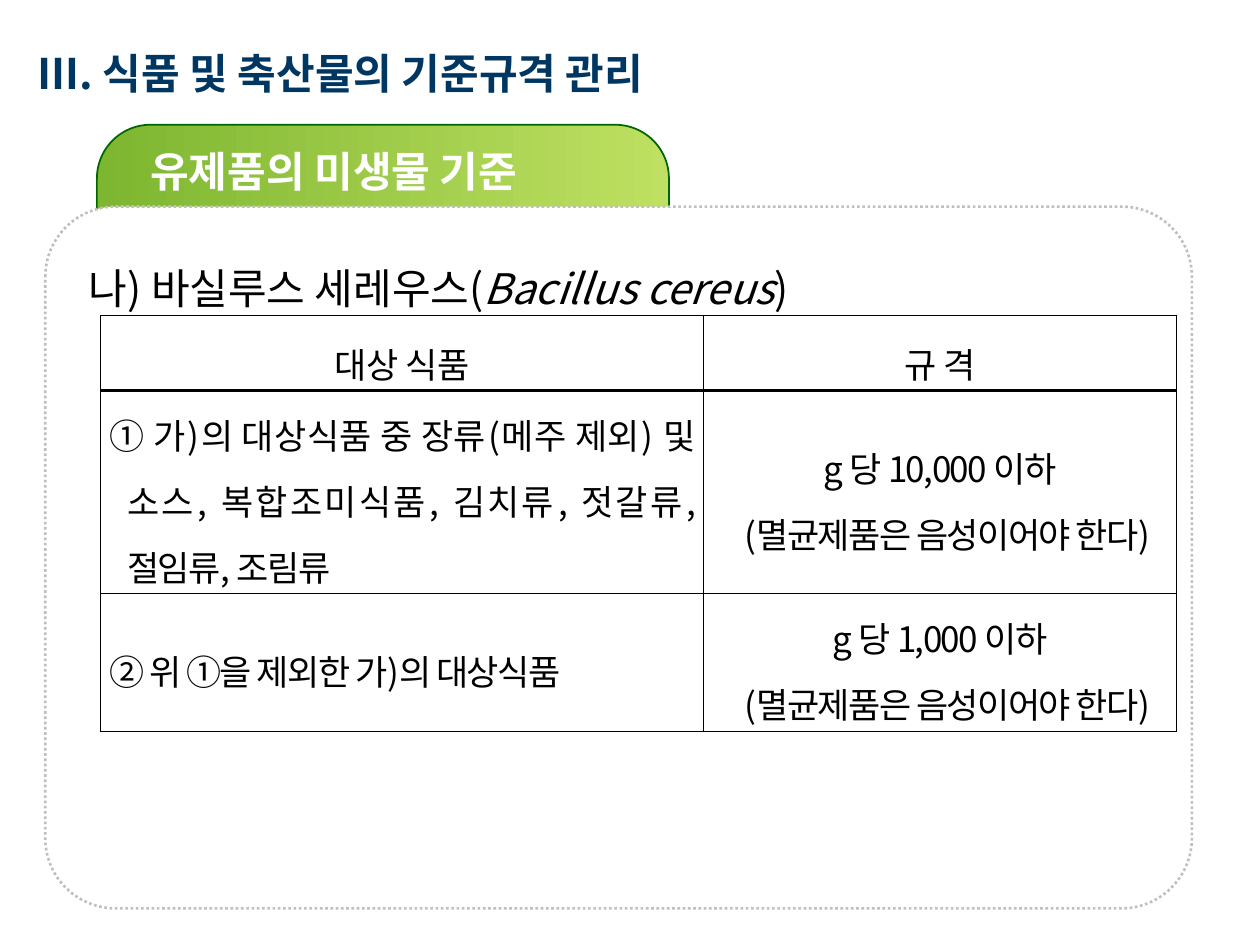
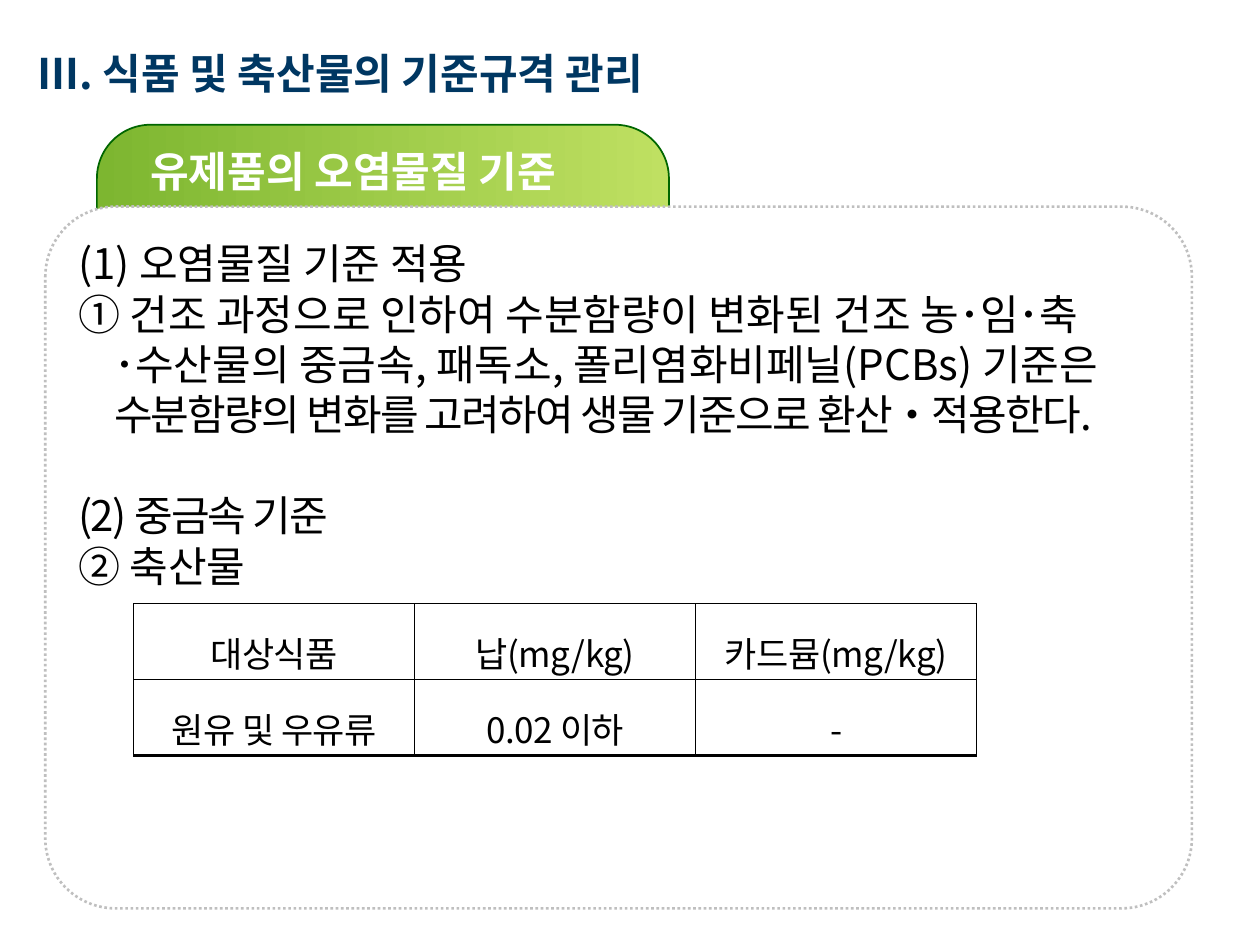
from dataclasses import dataclass

from lxml import etree
from pptx import Presentation
from pptx.dml.color import RGBColor
from pptx.enum import dml, shapes, text
from pptx.oxml import ns
from pptx.util import Pt


@dataclass(frozen=True)
class Theme:
    font: str = "Noto Sans CJK KR"
    navy: str = "003762"
    black: str = "000000"
    white: str = "FFFFFF"
    grey: str = "BFBFBF"
    green_line: str = "006600"
    green_from: str = "7DB630"
    green_to: str = "BFE062"
    head_size: float = 24
    table_size: float = 20
    line_pitch: float = 28.8
    thin: float = 0.56
    thick: float = 1.98


T = Theme()
LEFT, CENTER, JUSTIFY = (text.PP_ALIGN.LEFT, text.PP_ALIGN.CENTER,
                         text.PP_ALIGN.JUSTIFY)
SECTION = "Ⅲ. 식품 및 축산물의 기준규격 관리"
TITLE_BOX = (14.4, 20.9, 420, 39.6)
BAND_BOX = (55.4, 71.3, 326.9, 183.6)
PANEL_BOX = (25.9, 118.1, 655.2, 401)


def rgb(value):
    return RGBColor.from_string(value)


def write(p, content, size=T.head_size, color=T.black, bold=False, italic=False,
          spc=0, align=LEFT, spacing=Pt(T.line_pitch), before=0, margin=0, indent=0):
    """Add content to paragraph p; a newline becomes a line break."""
    p.alignment, p.line_spacing, p.space_before = align, spacing, Pt(before)
    pPr = p._p.get_or_add_pPr()
    pPr.set("marL", str(Pt(margin)))
    pPr.set("indent", str(Pt(indent)))
    for i, line in enumerate(content.split("\n")):
        if i:
            p.add_line_break()
        r = p.add_run()
        r.text = line
        f = r.font
        f.name, f.size, f.bold, f.italic = T.font, Pt(size), bold, italic
        f.color.rgb = rgb(color)
        rPr = r._r.get_or_add_rPr()
        rPr.set("spc", str(round(spc * 100)))
        etree.SubElement(rPr, ns.qn("a:ea"), typeface=T.font)


def frame(sp, left=7.2, right=0):
    tf = sp.text_frame
    tf.word_wrap = True
    tf.vertical_anchor = text.MSO_ANCHOR.TOP
    tf.margin_left, tf.margin_right = Pt(left), Pt(right)
    tf.margin_top, tf.margin_bottom = Pt(6), Pt(3.6)
    return tf


def round_rect(s, box, radius, line, width):
    sp = s.shapes.add_shape(shapes.MSO_SHAPE.ROUNDED_RECTANGLE, *map(Pt, box))
    sp.adjustments[0] = radius
    sp.shadow.inherit = False
    sp.line.color.rgb = rgb(line)
    sp.line.width = Pt(width)
    return sp


def section_title(s, box):
    tf = frame(s.shapes.add_textbox(*map(Pt, box)))
    write(tf.paragraphs[0], SECTION, color=T.navy, bold=True)


def topic_band(s, box, topic):
    sp = round_rect(s, box, 0.167, T.green_line, 1)
    sp.fill.gradient()
    sp.fill.gradient_angle = 0
    for stop, color in zip(sp.fill.gradient_stops, (T.green_from, T.green_to)):
        stop.color.rgb = rgb(color)
    write(frame(sp, left=21.6).paragraphs[0], topic, color=T.white, bold=True,
          spacing=Pt(0.9 * T.line_pitch))


def content_panel(s, box):
    sp = round_rect(s, box, 0.1, T.grey, 1.5)
    sp.line.dash_style = dml.MSO_LINE.ROUND_DOT
    sp.fill.solid()
    sp.fill.fore_color.rgb = rgb(T.white)
    return frame(sp)


def topic_slide(prs, topic):
    """Add a slide with the shared parts; return it and its panel's text frame."""
    s = prs.slides.add_slide(prs.slide_layouts[6])
    section_title(s, TITLE_BOX)
    topic_band(s, BAND_BOX, topic)
    return s, content_panel(s, PANEL_BOX)


def cell_borders(cell, top, bottom):
    tcPr = cell._tc.get_or_add_tcPr()
    for side, width in zip("LRTB", (T.thin, T.thin, top, bottom)):
        ln = etree.SubElement(tcPr, ns.qn(f"a:ln{side}"), w=str(Pt(width)))
        fill = etree.SubElement(ln, ns.qn("a:solidFill"))
        etree.SubElement(fill, ns.qn("a:srgbClr"), val=T.black)


def standards_table(s, left, top, widths, heights, rows, thick_row, insets):
    """rows hold (content, format) cells; the rule below thick_row is heavy."""
    table = s.shapes.add_table(len(heights), len(widths), Pt(left), Pt(top),
                               Pt(sum(widths)), Pt(sum(heights))).table
    table.first_row = table.horz_banding = False
    for column, width in zip(table.columns, widths):
        column.width = Pt(width)
    for i, (height, row) in enumerate(zip(heights, rows)):
        table.rows[i].height = Pt(height)
        for j, (content, fmt) in enumerate(row):
            cell = table.cell(i, j)
            cell_borders(cell, T.thick if i == thick_row + 1 else T.thin,
                         T.thick if i == thick_row else T.thin)
            cell.fill.background()
            cell.vertical_anchor = text.MSO_ANCHOR.MIDDLE
            cell.margin_left = cell.margin_right = Pt(insets[j])
            cell.margin_top = cell.margin_bottom = Pt(1.44)
            write(cell.text_frame.paragraphs[0], content, size=T.table_size, **fmt)


HEADER = dict(align=CENTER, spacing=1.4, spc=-0.3)


def microbe_slide(prs):
    s, tf = topic_slide(prs, "유제품의 미생물 기준")
    for part, italic in (("나) 바실루스 세레우스(", False),
                         ("Bacillus cereus", True), (")", False)):
        write(tf.paragraphs[0], part, italic=italic, margin=6,
              spacing=Pt(1.5 * T.line_pitch))
    body = dict(spacing=1.3, spc=-0.9)
    limit = dict(body, align=CENTER, margin=8.64, indent=-8.64)
    foods = dict(body, align=JUSTIFY, margin=10.08, indent=-10.08)
    others = dict(body, align=JUSTIFY, margin=15.12, indent=-15.12)
    rows = [
        [("대상 식품", HEADER), ("규 격", HEADER)],
        [("① 가)의 대상식품 중 장류(메주 제외) 및 소스, 복합조미식품, 김치류, "
          "젓갈류, 절임류, 조림류", foods),
         ("g 당 10,000 이하\n(멸균제품은 음성이어야 한다)", limit)],
        [("② 위 ①을 제외한 가)의 대상식품", others),
         ("g 당 1,000 이하\n(멸균제품은 음성이어야 한다)", limit)],
    ]
    standards_table(s, 57.6, 180, (344.2, 270.7), (43.4, 116, 78.3), rows,
                    thick_row=0, insets=(5.04, 7.2))


def contaminant_slide(prs):
    s, tf = topic_slide(prs, "유제품의 오염물질 기준")
    lines = [
        ("(1) 오염물질 기준 적용", {}),
        ("① 건조 과정으로 인하여 수분함량이 변화된 건조 농･임･축", {}),
        ("･수산물의 중금속, 패독소, 폴리염화비페닐(PCBs) 기준은", dict(margin=20.5)),
        ("수분함량의 변화를 고려하여 생물 기준으로 환산‧적용한다.",
         dict(margin=20.5, spc=-1)),
        ("(2) 중금속 기준", dict(spc=-1, before=T.line_pitch)),
        ("② 축산물", {}),
    ]
    for i, (content, fmt) in enumerate(lines):
        write(tf.add_paragraph() if i else tf.paragraphs[0], content, **fmt)
    rows = [[(content, HEADER) for content in row] for row in (
        ("대상식품", "납(mg/kg)", "카드뮴(mg/kg)"),
        ("원유 및 우유류", "0.02 이하", "-"))]
    standards_table(s, 76.3, 344.9, (160.6,) * 3, (43.4,) * 2, rows,
                    thick_row=1, insets=(1.44,) * 3)


def main():
    prs = Presentation()
    prs.slide_width, prs.slide_height = Pt(720), Pt(540)
    microbe_slide(prs)
    contaminant_slide(prs)
    prs.save("out.pptx")


if __name__ == "__main__":
    main()
